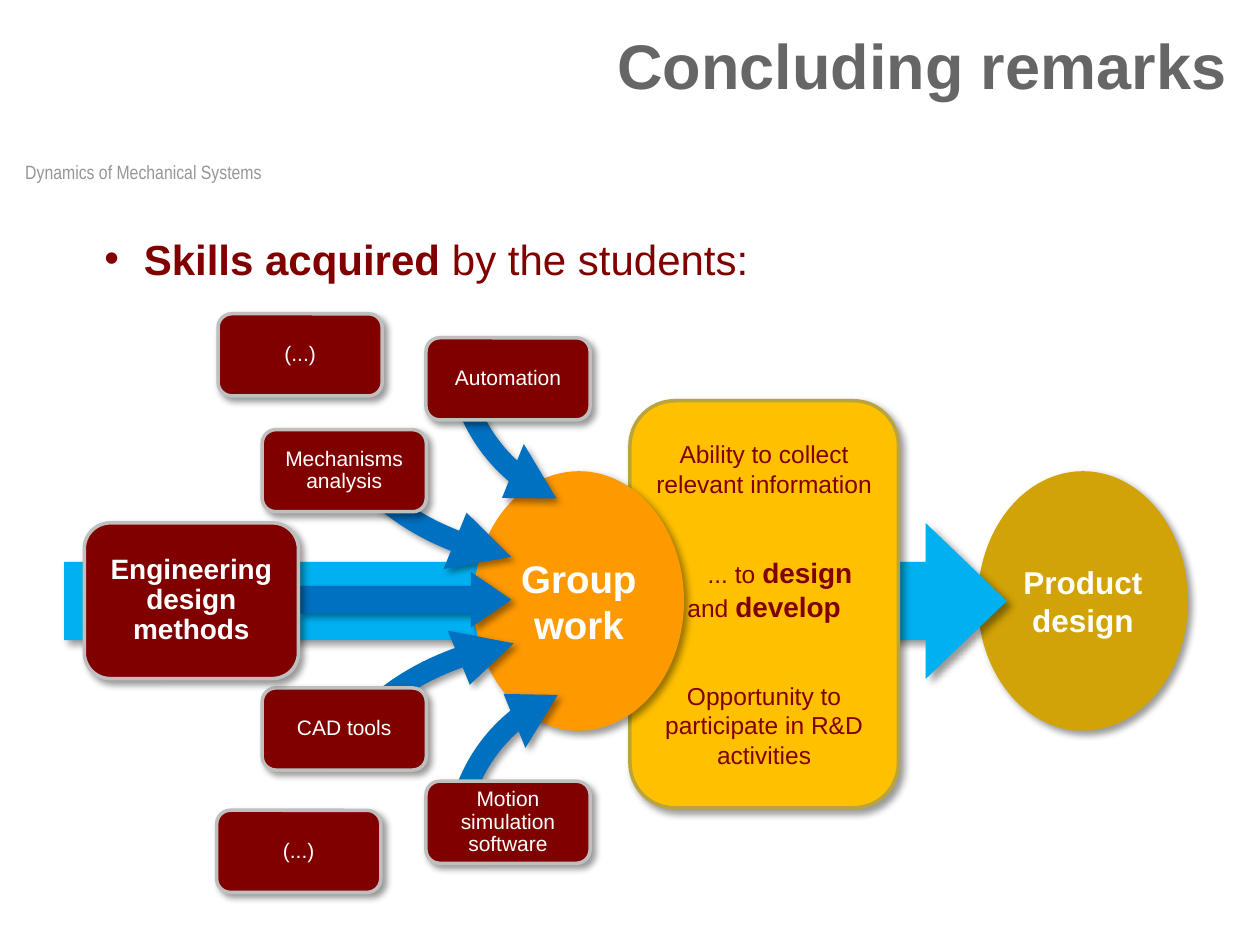
"""Build the concluding remarks slide with its skills diagram."""
from dataclasses import dataclass

from lxml.etree import SubElement
from pptx import Presentation
from pptx.dml.color import RGBColor
from pptx.enum.shapes import MSO_SHAPE
from pptx.enum.text import MSO_ANCHOR, PP_ALIGN
from pptx.oxml.ns import qn
from pptx.util import Pt


@dataclass(frozen=True)
class Theme:
    """Colours, fonts and type sizes of the slide."""
    font: str = "Arial"
    footer_font: str = "Arial Narrow"
    grey: str = "666666"
    light_grey: str = "969696"
    maroon: str = "800000"
    silver: str = "BFBFBF"
    white: str = "FFFFFF"
    black: str = "000000"
    gold: str = "D2A306"
    yellow: str = "FFC000"
    olive: str = "BAA53D"
    orange: str = "FF9900"
    cyan: str = "00B0F0"
    blue: str = "0070C0"
    title: int = 36
    lead: int = 24
    group: int = 22
    product: int = 18
    strong: int = 16
    body: int = 14
    skill: int = 12
    footer: int = 11


@dataclass(frozen=True)
class Box:
    """A rectangle in points."""
    left: float
    top: float
    width: float
    height: float

    def inner(self, left, top, width, height):
        """Return a box placed relative to this one."""
        return Box(self.left + left, self.top + top, width, height)

    def lengths(self):
        """Return the four lengths for python-pptx."""
        return [Pt(value) for value in (self.left, self.top, self.width, self.height)]


THEME = Theme()


def style_font(font, size, color, bold=False, name=THEME.font):
    """Set the face, size, colour and weight of a font."""
    font.name, font.size, font.bold = name, Pt(size), bold
    font.color.rgb = RGBColor.from_string(color)


def add_shadow(shape):
    """Give a shape the soft shadow of the diagram."""
    shape.shadow.inherit = False
    effects = shape._element.spPr.find(qn("a:effectLst"))
    shadow = SubElement(effects, qn("a:outerShdw"), blurRad=str(Pt(4)), dist=str(Pt(3)),
                        dir="2700000", algn="tl", rotWithShape="0")
    color = SubElement(shadow, qn("a:srgbClr"), val=THEME.black)
    SubElement(color, qn("a:alpha"), val="40000")


def add_figure(slide, kind, box, fill, line=None, adjustments=()):
    """Add a filled shape with a shadow."""
    shape = slide.shapes.add_shape(kind, *box.lengths())
    shape.fill.solid()
    shape.fill.fore_color.rgb = RGBColor.from_string(fill)
    if line:
        shape.line.color.rgb = RGBColor.from_string(line)
        shape.line.width = Pt(2)
    else:
        shape.line.fill.background()
    for index, value in enumerate(adjustments):
        shape.adjustments[index] = value
    add_shadow(shape)
    return shape


def write_label(shape, text, size, color, bold=False, spacing=None):
    """Write centred lines of one style into a shape."""
    frame = shape.text_frame
    frame.word_wrap = True
    frame.vertical_anchor = MSO_ANCHOR.MIDDLE
    frame.text = text
    for paragraph in frame.paragraphs:
        paragraph.alignment = PP_ALIGN.CENTER
        paragraph.line_spacing = spacing
        style_font(paragraph.font, size, color, bold)


def add_text(slide, box, text, alignment, inset=True):
    """Add a wrapping text box and return its paragraph."""
    frame = slide.shapes.add_textbox(*box.lengths()).text_frame
    frame.word_wrap = True
    if not inset:
        frame.margin_left = frame.margin_top = frame.margin_right = frame.margin_bottom = 0
    paragraph = frame.paragraphs[0]
    paragraph.text = text
    paragraph.alignment = alignment
    return paragraph


def add_header(slide, box):
    """Add the title and the course name."""
    title = add_text(slide, box.inner(222, 0, 471.6, 90), "Concluding remarks", PP_ALIGN.RIGHT)
    style_font(title.font, THEME.title, THEME.grey, True)
    course = add_text(slide, box.inner(0, 80, 167, 13), "Dynamics of Mechanical Systems",
                      PP_ALIGN.LEFT, inset=False)
    style_font(course.font, THEME.footer, THEME.light_grey, name=THEME.footer_font)


def add_lead(slide, box):
    """Add the bulleted sentence above the diagram."""
    paragraph = add_text(slide, box, "", PP_ALIGN.JUSTIFY)
    paragraph.space_after = Pt(12)
    properties = paragraph._p.get_or_add_pPr()
    properties.set("marL", str(Pt(22.5)))
    properties.set("indent", str(Pt(-22.5)))
    SubElement(properties, qn("a:buFont"), typeface=THEME.font)
    SubElement(properties, qn("a:buChar"), char="•")
    style_font(paragraph.font, THEME.lead, THEME.maroon)
    for text, bold in (("Skills acquired", True), (" by the students:", False)):
        run = paragraph.add_run()
        run.text = text
        style_font(run.font, THEME.lead, THEME.maroon, bold)


def add_abilities(slide, box):
    """Add the yellow panel of abilities."""
    panel = add_figure(slide, MSO_SHAPE.FLOWCHART_ALTERNATE_PROCESS, box, THEME.yellow, THEME.olive)
    write_label(panel, "Ability to collect relevant information\n\n"
                "Opportunity to participate in R&D activities", THEME.body, THEME.maroon)
    middle, last = panel.text_frame.paragraphs[1:]
    middle.space_before = last.space_before = Pt(33)
    middle._p.get_or_add_pPr().set("indent", str(Pt(18)))
    for text, strong in (("... to ", False), ("design", True), (" and ", False), ("develop", True)):
        run = middle.add_run()
        run.text = text
        style_font(run.font, THEME.strong if strong else THEME.body, THEME.maroon, strong)


def add_flow(slide, box):
    """Add the main flow from group work to product design."""
    product = add_figure(slide, MSO_SHAPE.OVAL, box.inner(522.7, 89.3, 120.2, 148.3), THEME.gold)
    write_label(product, "Product design", THEME.product, THEME.white, True)
    add_figure(slide, MSO_SHAPE.RIGHT_ARROW, box.inner(0.7, 118.8, 538.6, 89.3), THEME.cyan,
               adjustments=(0.5, 0.52))
    add_abilities(slide, box.inner(324, 49, 153.4, 232.6))
    group = add_figure(slide, MSO_SHAPE.OVAL, box.inner(234.7, 89.3, 120.2, 148.3), THEME.orange)
    write_label(group, "Group\nwork", THEME.group, THEME.white, True)


def add_inputs(slide, box):
    """Add the blue arrows that lead into group work."""
    arcs = (
        (208.1, 193.7, 218.9, 219.6, 10.69, 114.93, False),
        (208.1, -95.8, 218.9, 224.6, 10.69, 114.93, True),
        (135.4, -69.8, 317.5, 229, 10.56, 122.09, True),
        (135.4, 167.8, 317.5, 219.6, 10.56, 122.09, False),
    )
    for left, top, width, height, head, start, flipped in arcs:
        arc = add_figure(slide, MSO_SHAPE.CIRCULAR_ARROW, box.inner(left, top, width, height),
                         THEME.blue, adjustments=(0.055, head, 138.15, start, 0.076))
        if flipped:
            arc._element.spPr.xfrm.set("flipV", "1")
    add_figure(slide, MSO_SHAPE.RIGHT_ARROW, box.inner(134.6, 146.9, 121.7, 31.7), THEME.blue,
               adjustments=(0.5, 0.73))


def add_skill(slide, box, text, size, bold=False):
    """Add one maroon skill card."""
    card = add_figure(slide, MSO_SHAPE.ROUNDED_RECTANGLE, box, THEME.maroon, THEME.silver, (1 / 6,))
    frame = card.text_frame
    frame.margin_left = frame.margin_top = frame.margin_right = frame.margin_bottom = Pt(7.5)
    write_label(card, text, size, THEME.white, bold, 0.9)


def add_skills(slide, box):
    """Add all the skill cards."""
    skills = (
        ("Mechanisms analysis", 113.8, 65.5),
        ("Automation", 207.4, 13),
        ("CAD tools", 113.8, 213.1),
        ("Motion simulation software", 207.4, 266.4),
        ("(...)", 88.6, -0.7),
        ("(...)", 87.8, 283),
    )
    for text, left, top in skills:
        add_skill(slide, box.inner(left, top, 93.8, 46.9), text, THEME.skill)
    add_skill(slide, box.inner(12.2, 118.8, 122.4, 89), "Engineering design methods",
              THEME.strong, True)


def main():
    """Build and save the presentation."""
    presentation = Presentation()
    presentation.slide_width, presentation.slide_height = Pt(720), Pt(540)
    slide = presentation.slides.add_slide(presentation.slide_layouts[6])
    add_header(slide, Box(14.4, 11.5, 693.6, 93))
    add_lead(slide, Box(52.6, 129.6, 655.2, 36.7))
    diagram = Box(36, 180, 643, 330)
    for add_region in (add_flow, add_inputs, add_skills):
        add_region(slide, diagram)
    presentation.save("out.pptx")


if __name__ == "__main__":
    main()
